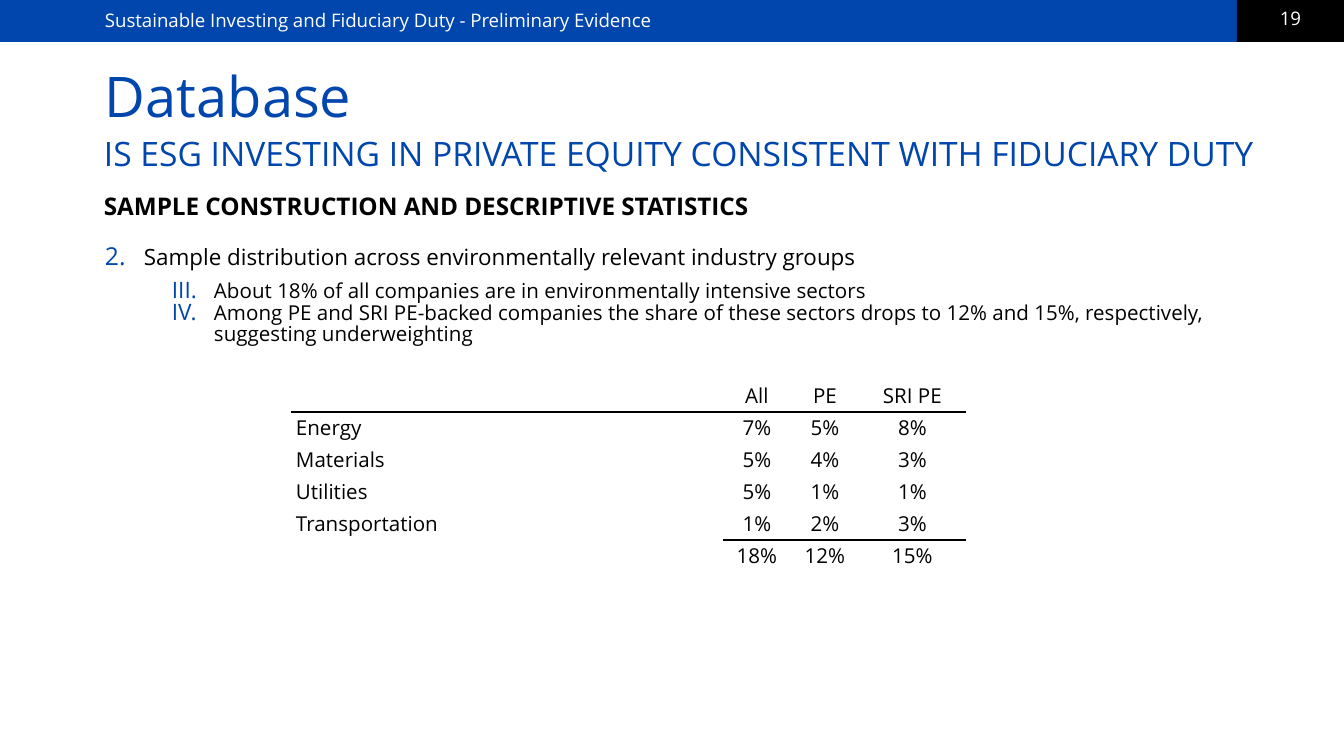
from lxml.etree import SubElement
from pptx import Presentation
from pptx.dml.color import RGBColor
from pptx.enum.shapes import MSO_SHAPE as Shape
from pptx.enum.text import MSO_ANCHOR as Anchor, MSO_AUTO_SIZE as AutoSize, PP_ALIGN as Align
from pptx.oxml import parse_xml
from pptx.oxml.ns import nsdecls, qn
from pptx.util import Emu, Pt

BLUE, BLACK, WHITE = "0046AD", "000000", "FFFFFF"
FONT = "Open Sans"
PX = 914400 / 134.4

BARS = [((0, 0, 1237, 42), BLUE, ""), ((1237, 0, 107, 42), BLACK, "19")]
TITLE = "Database"
HEADINGS = [
    ("Sustainable Investing and Fiduciary Duty - Preliminary Evidence", (105, 9, 699, 23), 10, WHITE, False),
    ("IS ESG INVESTING IN PRIVATE EQUITY CONSISTENT WITH FIDUCIARY DUTY", (104, 133, 1156, 82), 18, BLUE, False),
    ("SAMPLE CONSTRUCTION AND DESCRIPTIVE STATISTICS", (104, 191, 672, 30), 13, BLACK, True),
]
LIST_LEVELS = [
    dict(size=12, left=39, hang=39, after=6, spacing=1.0, numbering="arabicPeriod", start=2),
    dict(size=11, left=109, hang=42, after=0, spacing=0.88, numbering="romanUcPeriod", start=3),
]
FINDINGS = [
    (0, "Sample distribution across environmentally relevant industry groups"),
    (1, "About 18% of all companies are in environmentally intensive sectors"),
    (1, "Among PE and SRI PE-backed companies the share of these sectors drops "
        "to 12% and 15%, respectively, suggesting underweighting"),
]
SECTOR_SHARES = [
    ("", "All", "PE", "SRI PE"),
    ("Energy", "7%", "5%", "8%"),
    ("Materials", "5%", "4%", "3%"),
    ("Utilities", "5%", "1%", "1%"),
    ("Transportation", "1%", "2%", "3%"),
    ("", "18%", "12%", "15%"),
]
COLUMN_WIDTHS = [432, 66, 70, 105]
ROW_HEIGHT = 32
RULES = [(0, 0), (4, 1)]


def px(length):
    return Emu(round(length * PX))


def rgb(color):
    return RGBColor.from_string(color)


def style(paragraph, size, color, bold=False):
    for run in paragraph.runs:
        run.font.name, run.font.size, run.font.bold = FONT, Pt(size), bold
        run.font.color.rgb = rgb(color)


def prepare(frame):
    frame.word_wrap = True
    frame.auto_size = AutoSize.NONE
    frame.vertical_anchor = Anchor.TOP
    frame.margin_left = frame.margin_right = frame.margin_top = frame.margin_bottom = 0
    return frame


def add_text(slide, box):
    return prepare(slide.shapes.add_textbox(*map(px, box)).text_frame)


def number(paragraph, level):
    properties = paragraph._p.get_or_add_pPr()
    properties.set("marL", str(px(level["left"])))
    properties.set("indent", str(-px(level["hang"])))
    SubElement(SubElement(properties, qn("a:buClr")), qn("a:srgbClr"), val=BLUE)
    SubElement(properties, qn("a:buSzPct"), val="110000")
    SubElement(properties, qn("a:buFont"), typeface=FONT)
    SubElement(properties, qn("a:buAutoNum"), type=level["numbering"], startAt=str(level["start"]))


def add_border(cell, side):
    cell._tc.get_or_add_tcPr().insert(0, parse_xml(
        f'<a:{side} {nsdecls("a")} w="12700"><a:solidFill><a:srgbClr val="{BLACK}"/>'
        f'</a:solidFill></a:{side}>'))


def add_bars(slide):
    for box, color, label in BARS:
        bar = slide.shapes.add_shape(Shape.RECTANGLE, *map(px, box))
        bar.shadow.inherit = False
        bar.fill.solid()
        bar.fill.fore_color.rgb = rgb(color)
        bar.line.fill.background()
        if label:
            bar.text_frame.text = label
            bar.text_frame.vertical_anchor = Anchor.TOP
            bar.text_frame.paragraphs[0].alignment = Align.CENTER
            style(bar.text_frame.paragraphs[0], 10, WHITE)


def add_headings(slide):
    title = slide.shapes.title
    title.left, title.top, title.width, title.height = map(px, (105, 63, 1114, 69))
    heading = prepare(title.text_frame)
    heading.text = TITLE
    heading.paragraphs[0].alignment = Align.LEFT
    heading.paragraphs[0].line_spacing = Pt(35)
    style(heading.paragraphs[0], 30, BLUE)
    for wording, box, size, color, bold in HEADINGS:
        frame = add_text(slide, box)
        frame.text = wording
        style(frame.paragraphs[0], size, color, bold)


def add_findings(slide):
    frame = add_text(slide, (105, 243, 1114, 142))
    for index, (depth, wording) in enumerate(FINDINGS):
        level = LIST_LEVELS[depth]
        paragraph = frame.add_paragraph() if index else frame.paragraphs[0]
        paragraph.text = wording
        paragraph.level = depth
        paragraph.line_spacing = level["spacing"]
        paragraph.space_after = Pt(level["after"])
        number(paragraph, level)
        style(paragraph, level["size"], BLACK)


def add_shares(slide):
    rows, columns = len(SECTOR_SHARES), len(COLUMN_WIDTHS)
    table = slide.shapes.add_table(rows, columns, px(292), px(380), px(sum(COLUMN_WIDTHS)),
                                   px(ROW_HEIGHT * rows)).table
    table.first_row = table.horz_banding = False
    for column, width in zip(table.columns, COLUMN_WIDTHS):
        column.width = px(width)
    for row, values in enumerate(SECTOR_SHARES):
        table.rows[row].height = px(ROW_HEIGHT)
        for column, value in enumerate(values):
            cell = table.cell(row, column)
            cell.fill.background()
            cell.vertical_anchor = Anchor.MIDDLE
            cell.margin_left = cell.margin_right = px(4)
            cell.margin_top = cell.margin_bottom = px(2)
            cell.text = value
            paragraph = cell.text_frame.paragraphs[0]
            paragraph.alignment = Align.CENTER if column else Align.LEFT
            style(paragraph, 11, BLACK)
            if not value:
                SubElement(paragraph._p, qn("a:endParaRPr"), sz="1100")
    for row, first_column in RULES:
        for column in range(first_column, columns):
            add_border(table.cell(row, column), "lnB")
            add_border(table.cell(row + 1, column), "lnT")


def main():
    deck = Presentation()
    deck.slide_width, deck.slide_height = px(1344), px(756)
    slide = deck.slides.add_slide(deck.slide_layouts[5])
    add_bars(slide)
    add_headings(slide)
    add_findings(slide)
    add_shares(slide)
    deck.save("out.pptx")


if __name__ == "__main__":
    main()
